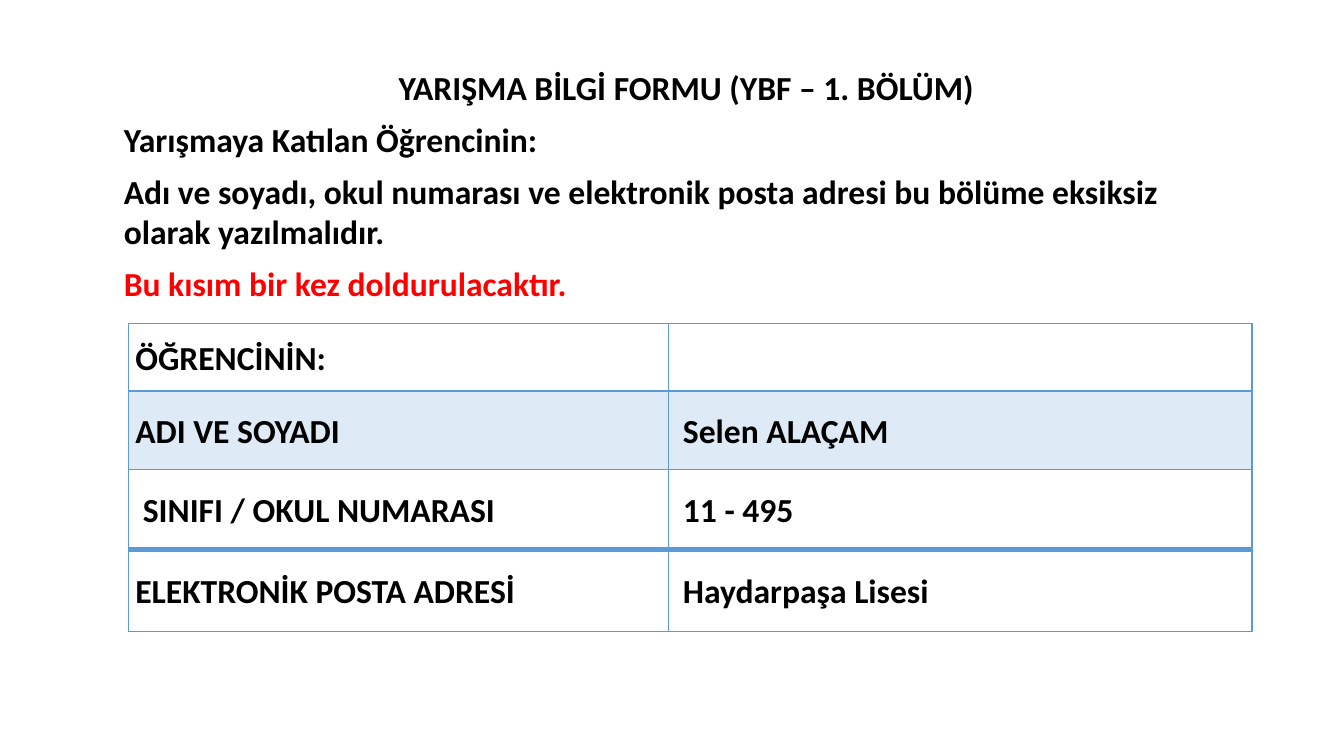
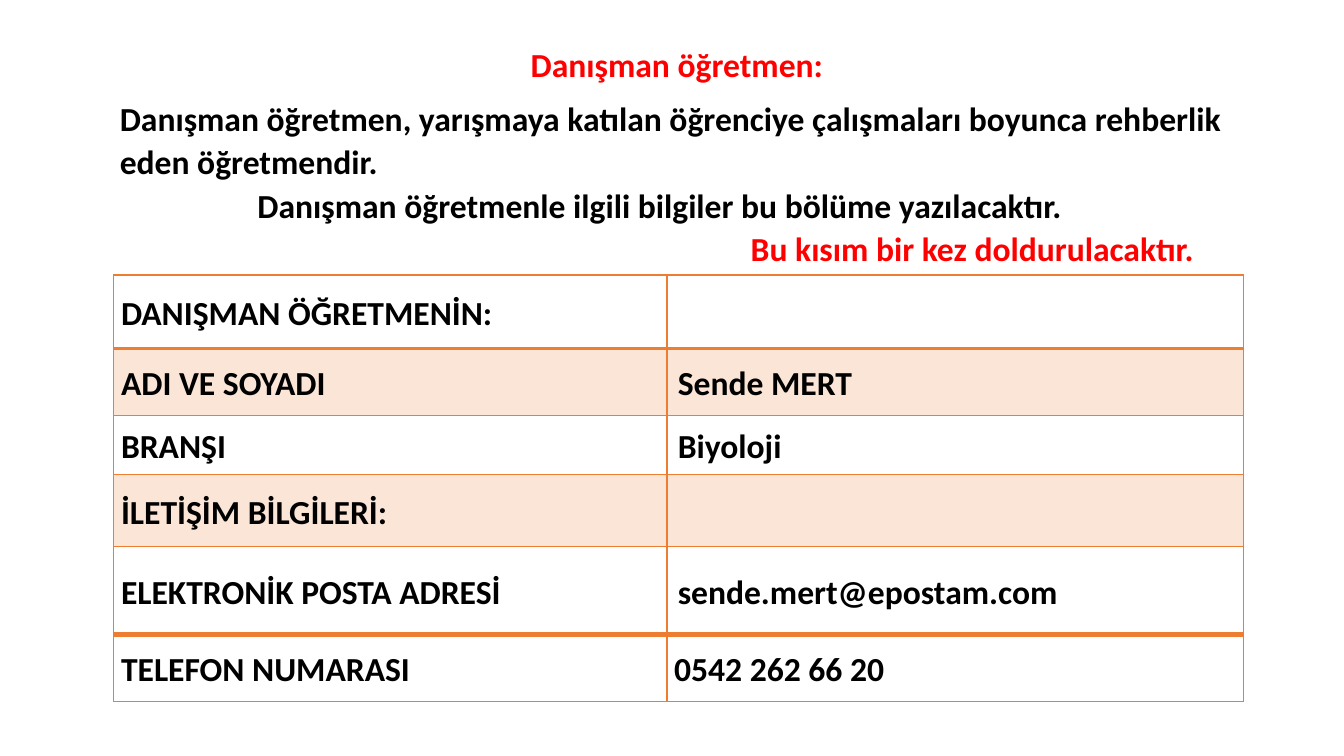
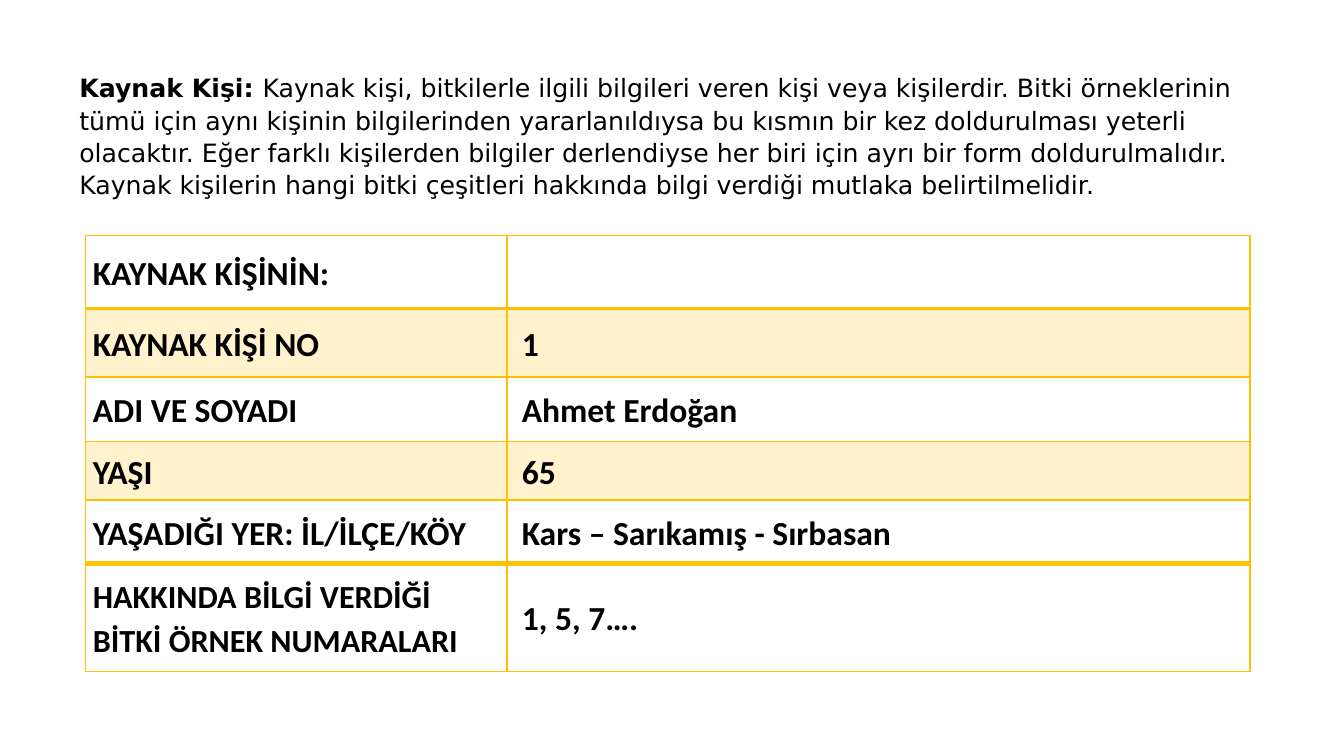
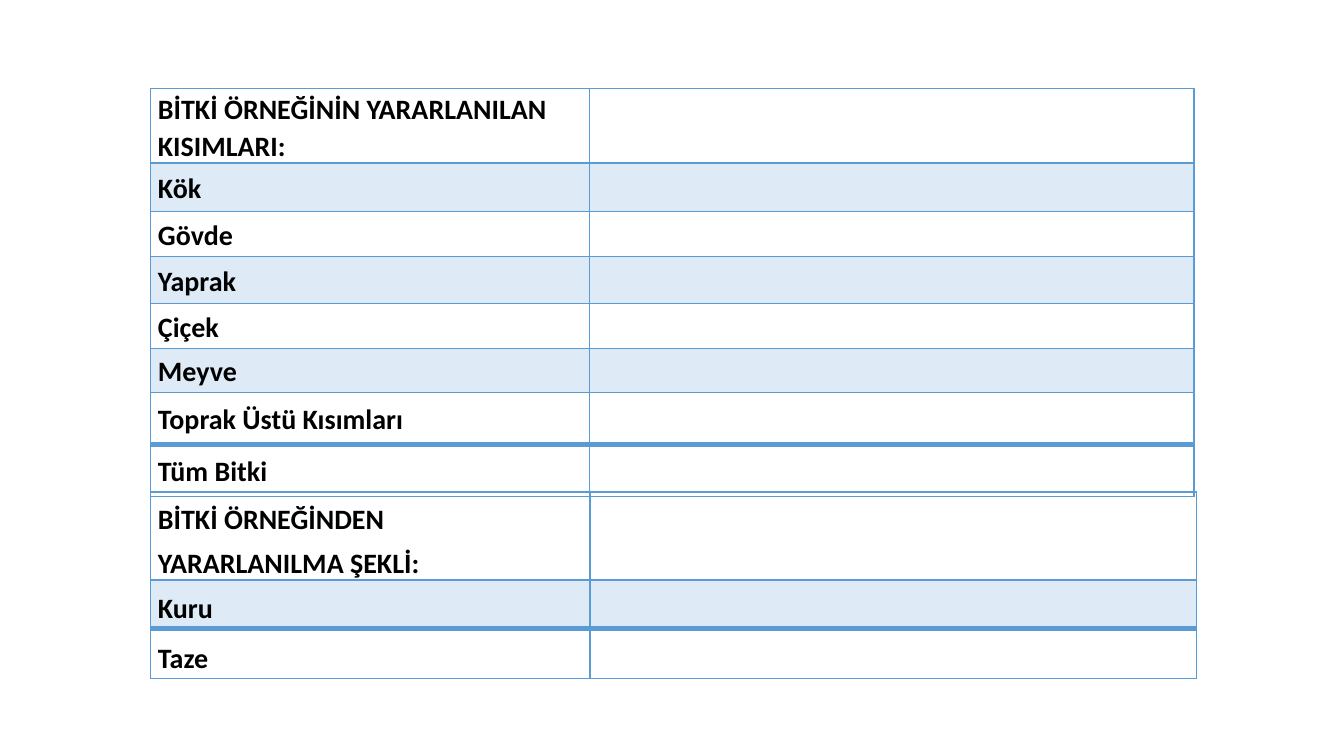
from dataclasses import dataclass

from lxml import etree
from pptx import Presentation
from pptx.dml.color import RGBColor
from pptx.enum.text import MSO_ANCHOR, MSO_AUTO_SIZE, PP_ALIGN
from pptx.oxml.ns import qn
from pptx.util import Cm, Pt

CENTER, LEFT = PP_ALIGN.CENTER, PP_ALIGN.LEFT
TOP, MIDDLE = MSO_ANCHOR.TOP, MSO_ANCHOR.MIDDLE
NO_FIT = MSO_AUTO_SIZE.NONE
TITLE_ONLY, BLANK = 5, 6

BLACK = RGBColor(0x00, 0x00, 0x00)
RED = RGBColor(0xFF, 0x00, 0x00)
BLUE = RGBColor(0x5B, 0x9B, 0xD5)
BLUE_TINT = RGBColor(0xDE, 0xEB, 0xF7)
ORANGE = RGBColor(0xED, 0x7D, 0x31)
ORANGE_TINT = RGBColor(0xFB, 0xE5, 0xD6)
GOLD = RGBColor(0xFF, 0xC0, 0x00)
GOLD_TINT = RGBColor(0xFF, 0xF2, 0xCC)

FONT, NOTE_FONT = "Calibri", "DejaVu Sans"
TITLE_HEIGHT = 1.35
CELL_INSET, VALUE_INSET = 0.18, 0.37
THIN, HEADER_RULE, TOTAL_RULE = 1, 2, 4


@dataclass
class Row:
    """One row of a form table, with lengths in centimetres."""
    height: float
    label: str
    value: str = ""
    label_inset: float = CELL_INSET
    value_inset: float = VALUE_INSET
    label_size: int = 0


@dataclass
class FormStyle:
    """Colours and text format of a form table."""
    accent: RGBColor
    tint: RGBColor
    size: int = 24
    line_spacing: float = 1.1


def apply(target, **values):
    """Set each named format value on the target."""
    for name, value in values.items():
        setattr(target, name, value)


def add_span(para, text, color=BLACK, size=24, bold=True, font=FONT):
    """Add one formatted run to a paragraph."""
    span = para.add_run()
    span.text = text
    apply(span.font, name=font, size=Pt(size), bold=bold)
    span.font.color.rgb = color


def add_title(page, box, text, color):
    """Place and format the title placeholder in the box."""
    title = page.shapes.title
    left, top, width = box
    apply(title, left=Cm(left), top=Cm(top), width=Cm(width), height=Cm(TITLE_HEIGHT))
    apply(title.text_frame, vertical_anchor=TOP, auto_size=NO_FIT, word_wrap=True)
    para = title.text_frame.paragraphs[0]
    apply(para, alignment=CENTER, line_spacing=1.07)
    add_span(para, text, color)


def add_text(page, box, paragraphs, line_spacing, space_after):
    """Add a text box of paragraphs, each an indent and a list of spans."""
    frame = page.shapes.add_textbox(*map(Cm, box)).text_frame
    frame.word_wrap = True
    for index, (indent, spans) in enumerate(paragraphs):
        para = frame.add_paragraph() if index else frame.paragraphs[0]
        apply(para, alignment=LEFT, line_spacing=line_spacing, space_after=Pt(space_after))
        if indent:
            para._p.get_or_add_pPr().set("marL", str(Cm(indent)))
        for span in spans:
            add_span(para, **span)


def set_borders(cell, color, top, bottom):
    """Draw the four borders of a cell, with given top and bottom weights."""
    weights = {"a:lnL": THIN, "a:lnR": THIN, "a:lnT": top, "a:lnB": bottom}
    properties = cell._tc.get_or_add_tcPr()
    for index, (tag, weight) in enumerate(weights.items()):
        line = etree.Element(qn(tag), w=str(Pt(weight)))
        fill = etree.SubElement(line, qn("a:solidFill"))
        etree.SubElement(fill, qn("a:srgbClr"), val=str(color))
        properties.insert(index, line)


def fill_cell(cell, text, inset, size, style, banded):
    """Write the text of a cell and set its fill and insets."""
    apply(cell, vertical_anchor=MIDDLE, margin_left=Cm(inset),
          margin_right=Cm(CELL_INSET), margin_top=0, margin_bottom=0)
    if banded:
        cell.fill.solid()
        cell.fill.fore_color.rgb = style.tint
    else:
        cell.fill.background()
    para = cell.text_frame.paragraphs[0]
    apply(para, line_spacing=style.line_spacing, space_after=Pt(10))
    for index, line in enumerate(text.splitlines()):
        if index:
            para.add_line_break()
        add_span(para, line, size=size)


def add_form(page, position, widths, rows, style):
    """Add a label and value table with a header rule and a last-row rule."""
    left, top = position
    frame = page.shapes.add_table(len(rows), 2, Cm(left), Cm(top), Cm(sum(widths)),
                                  Cm(sum(row.height for row in rows)))
    table = frame.table
    apply(table, first_row=False, horz_banding=False)
    for column, width in zip(table.columns, widths):
        column.width = Cm(width)
    rules = [THIN] * (len(rows) + 1)
    rules[1], rules[-2] = HEADER_RULE, TOTAL_RULE
    last = len(rows) - 1
    for index, row in enumerate(rows):
        table.rows[index].height = Cm(row.height)
        banded = index % 2 == 1 and index < last
        parts = [(row.label, row.label_inset, row.label_size or style.size),
                 (row.value, row.value_inset, style.size)]
        for column, (text, inset, size) in enumerate(parts):
            cell = table.cell(index, column)
            fill_cell(cell, text, inset, size, style, banded)
            set_borders(cell, style.accent, rules[index], rules[index + 1])


def add_page(deck, layout):
    """Add a slide with the given layout."""
    return deck.slides.add_slide(deck.slide_layouts[layout])


def student_page(deck):
    """Build the form for the student."""
    page = add_page(deck, TITLE_ONLY)
    left, top, width = 2.87, 1.5, 28.85
    add_title(page, (left, top, width), "YARIŞMA BİLGİ FORMU (YBF – 1. BÖLÜM)", BLACK)
    add_text(page, (left, top + 1.38, width, 4.9), [
        (0, [{"text": "Yarışmaya Katılan Öğrencinin:"}]),
        (0, [{"text": "Adı ve soyadı, okul numarası ve elektronik posta adresi bu bölüme "
                      "eksiksiz olarak yazılmalıdır."}]),
        (0, [{"text": "Bu kısım bir kez doldurulacaktır.", "color": RED}]),
    ], 1.0, 8)
    add_form(page, (3.23, 8.15), (13.61, 14.71), [
        Row(1.7, "ÖĞRENCİNİN:"),
        Row(1.98, "ADI VE SOYADI", "Selen ALAÇAM"),
        Row(2.01, "SINIFI / OKUL NUMARASI", "11 - 495", label_inset=VALUE_INSET),
        Row(2.08, "ELEKTRONİK POSTA ADRESİ", "Haydarpaşa Lisesi"),
    ], FormStyle(BLUE, BLUE_TINT))


def teacher_page(deck):
    """Build the form for the advising teacher."""
    page = add_page(deck, TITLE_ONLY)
    left, top, width = 2.77, 0.9, 28.58
    inset = 0.27
    add_title(page, (left, top, width), "Danışman öğretmen:", RED)
    add_text(page, (left, top + 1.38, width, 4.6), [
        (0, [{"text": "Danışman öğretmen, yarışmaya katılan öğrenciye çalışmaları boyunca "
                      "rehberlik eden öğretmendir."}]),
        (3.47, [{"text": "Danışman öğretmenle ilgili bilgiler bu bölüme yazılacaktır."}]),
        (15.9, [{"text": "Bu kısım bir kez doldurulacaktır.", "color": RED}]),
    ], 1.07, 0)
    add_form(page, (2.87, 6.93), (13.94, 14.53), [
        Row(1.85, "DANIŞMAN ÖĞRETMENİN:"),
        Row(1.7, "ADI VE SOYADI", "Sende MERT", value_inset=inset),
        Row(1.47, "BRANŞI", "Biyoloji", value_inset=inset),
        Row(1.83, "İLETİŞİM BİLGİLERİ:"),
        Row(2.21, "ELEKTRONİK POSTA ADRESİ", "sende.mert@epostam.com", value_inset=inset),
        Row(1.68, "TELEFON NUMARASI", "0542 262 66 20", value_inset=CELL_INSET),
    ], FormStyle(ORANGE, ORANGE_TINT))


def source_person_page(deck):
    """Build the form for the source person."""
    page = add_page(deck, BLANK)
    note = {"font": NOTE_FONT, "size": 18}
    add_text(page, (1.75, 1.65, 30.1, 3.56), [
        (0, [{"text": "Kaynak Kişi: ", **note},
             {"text": "Kaynak kişi, bitkilerle ilgili bilgileri veren kişi veya kişilerdir. "
                      "Bitki örneklerinin tümü için aynı kişinin bilgilerinden "
                      "yararlanıldıysa bu kısmın bir kez doldurulması yeterli olacaktır. "
                      "Eğer farklı kişilerden bilgiler derlendiyse her biri için ayrı bir "
                      "form doldurulmalıdır. Kaynak kişilerin hangi bitki çeşitleri "
                      "hakkında bilgi verdiği mutlaka belirtilmelidir.",
              "bold": False, **note}]),
    ], 1.07, 8)
    add_form(page, (2.16, 5.94), (10.62, 18.72), [
        Row(1.83, "KAYNAK KİŞİNİN:"),
        Row(1.73, "KAYNAK KİŞİ NO", "1"),
        Row(1.63, "ADI VE SOYADI", "Ahmet Erdoğan"),
        Row(1.47, "YAŞI", "65"),
        Row(1.6, "YAŞADIĞI YER: İL/İLÇE/KÖY", "Kars – Sarıkamış - Sırbasan"),
        Row(2.72, "HAKKINDA BİLGİ VERDİĞİ BİTKİ ÖRNEK NUMARALARI", "1, 5, 7….", label_size=23),
    ], FormStyle(GOLD, GOLD_TINT))


def plant_page(deck):
    """Build the two forms on the used plant parts and their state."""
    page = add_page(deck, BLANK)
    left = 3.8
    add_form(page, (left, 2.24), (11.05, 15.24), [
        Row(1.85, "BİTKİ ÖRNEĞİNİN YARARLANILAN KISIMLARI:"),
        Row(1.22, "Kök"),
        Row(1.14, "Gövde"),
        Row(1.19, "Yaprak"),
        Row(1.12, "Çiçek"),
        Row(1.12, "Meyve"),
        Row(1.3, "Toprak Üstü Kısımları"),
        Row(1.32, "Tüm Bitki"),
    ], FormStyle(BLUE, BLUE_TINT, size=20))
    add_form(page, (left, 12.4), (11.07, 15.29), [
        Row(2.21, "BİTKİ ÖRNEĞİNDEN\nYARARLANILMA ŞEKLİ:"),
        Row(1.22, "Kuru"),
        Row(1.27, "Taze"),
    ], FormStyle(BLUE, BLUE_TINT, size=20, line_spacing=1.3))


def main():
    """Build and save the deck."""
    deck = Presentation()
    apply(deck, slide_width=Cm(33.87), slide_height=Cm(19.05))
    for build in (student_page, teacher_page, source_person_page, plant_page):
        build(deck)
    deck.save("out.pptx")


if __name__ == "__main__":
    main()
